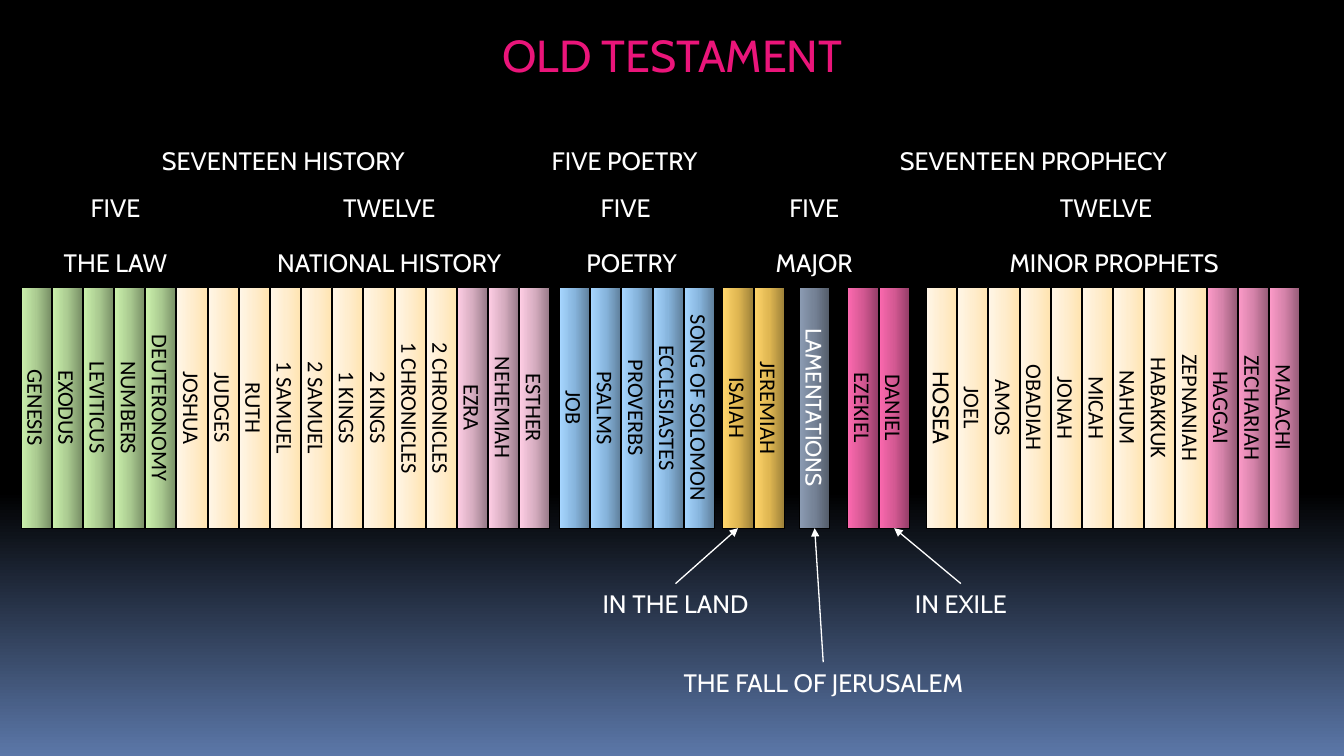
import copy
from dataclasses import dataclass

import pptx
import pptx.dml.color
import pptx.enum.shapes
import pptx.enum.text
import pptx.oxml
import pptx.oxml.ns
import pptx.util

Inches = pptx.util.Inches
Pt = pptx.util.Pt
ANCHOR = pptx.enum.text.MSO_ANCHOR
RECT = pptx.enum.shapes.MSO_SHAPE.RECTANGLE

BOOK_TOP, BOOK_W, BOOK_H = 2.85, 0.3, 2.39
PITCH = 3.4 / 11  # twelve minor prophets span 3.4 inches between first and last
LABEL_H = 0.4
BLACK, WHITE, PINK = "000000", "FFFFFF", "EA157A"

# Spine gradients: right edge, middle, left edge
GREEN = ("788F66", "ABCB91", "CBF1AC")
CREAM = ("FFE4B1", "FFEDCE", "FFF6E7")
MAUVE = ("967987", "D6ADC0", "FECDE4")
BLUE = ("5F7F9B", "87B5DD", "A7D6FF")
GOLD = ("9D8139", "E0B752", "FFD56B")
SLATE = ("535C69", "758296", "8B9BB2")
MAGENTA = ("953E68", "D45993", "FC69AF")
ROSE = ("965C77", "D583AA", "FD9BC9")


@dataclass
class Group:
    colors: tuple[str, str, str]
    books: list[str]


@dataclass
class Shelf:
    """Groups of books standing side by side from the left edge."""
    left: float
    groups: list[Group]


@dataclass
class Label:
    text: str
    left: float
    top: float
    width: float


@dataclass
class Callout:
    label: Label
    book: str


SHELVES = [
    Shelf(0.21, [
        Group(GREEN, ["GENESIS", "EXODUS", "LEVITICUS", "NUMBERS", "DEUTERONOMY"]),
        Group(CREAM, ["JOSHUA", "JUDGES", "RUTH", "1 SAMUEL", "2 SAMUEL", "1 KINGS",
                      "2 KINGS", "1 CHRONICLES", "2 CHRONICLES"]),
        Group(MAUVE, ["EZRA", "NEHEMIAH", "ESTHER"]),
    ]),
    Shelf(5.55, [Group(BLUE, ["JOB", "PSALMS", "PROVERBS", "ECCLESIASTES",
                              "SONG OF SOLOMON"])]),
    Shelf(7.17, [Group(GOLD, ["ISAIAH", "JEREMIAH"])]),
    Shelf(7.93, [Group(SLATE, ["LAMENTATIONS"])]),
    Shelf(8.41, [Group(MAGENTA, ["EZEKIEL", "DANIEL"])]),
    Shelf(9.19, [
        Group(CREAM, ["HOSEA", "JOEL", "AMOS", "OBADIAH", "JONAH", "MICAH", "NAHUM",
                      "HABAKKUK", "ZEPNANIAH"]),
        Group(ROSE, ["HAGGAI", "ZECHARIAH", "MALACHI"]),
    ]),
]
BOOK_FORMATS = {
    "LAMENTATIONS": {"name": "Cabin", "color": WHITE},
    "HOSEA": {"name": "Cabin"},
}

HEADINGS = [
    Label("THE LAW", 0.37, 2.4, 1.55),
    Label("NATIONAL HISTORY", 2, 2.4, 3.72),
    Label("POETRY", 5.49, 2.4, 1.55),
    Label("MAJOR", 7.3, 2.4, 1.55),
    Label("MINOR PROPHETS", 9.19, 2.4, 3.72),
    Label("FIVE", 0.37, 1.86, 1.55),
    Label("TWELVE", 2, 1.86, 3.72),
    Label("FIVE", 5.43, 1.86, 1.55),
    Label("FIVE", 7.3, 1.86, 1.55),
    Label("TWELVE", 9.11, 1.86, 3.72),
    Label("SEVENTEEN HISTORY", 0.29, 1.39, 5.04),
    Label("FIVE POETRY", 5.17, 1.39, 2.05),
    Label("SEVENTEEN PROPHECY", 7.46, 1.39, 5.58),
]
CALLOUTS = [
    Callout(Label("IN THE LAND", 5.87, 5.79, 1.66), "ISAIAH"),
    Callout(Label("THE FALL OF JERUSALEM", 6.67, 6.57, 2.99), "LAMENTATIONS"),
    Callout(Label("IN EXILE", 8.93, 5.79, 1.2), "DANIEL"),
]


def rgb(value: str) -> pptx.dml.color.RGBColor:
    return pptx.dml.color.RGBColor.from_string(value)


def set_gradient(fill, element, stops: list[tuple[float, str]], angle: float) -> None:
    """Give the fill inside element three stops; angle runs counter-clockwise."""
    fill.gradient()
    fill.gradient_angle = angle
    gs_list = element.find(".//" + pptx.oxml.ns.qn("a:gsLst"))
    gs_list.append(copy.deepcopy(gs_list[0]))
    for stop, (position, color) in zip(fill.gradient_stops, stops):
        stop.position = position
        stop.color.rgb = rgb(color)


def write(tf, text: str, formats: dict) -> None:
    """Write one centred paragraph."""
    p = tf.paragraphs[0]
    p.alignment = pptx.enum.text.PP_ALIGN.CENTER
    r = p.add_run()
    r.text = text
    for key, value in formats.items():
        if key == "color":
            r.font.color.rgb = rgb(value)
        else:
            setattr(r.font, key, value)


def add_rect(s, left: float, top: float, width: float, height: float, line: float):
    sp = s.shapes.add_shape(RECT, Inches(left), Inches(top), Inches(width), Inches(height))
    sp.shadow.inherit = False
    sp.line.color.rgb = rgb(BLACK)
    sp.line.width = Pt(line)
    return sp


def add_title(s) -> None:
    sp = add_rect(s, 2.71, 0.23, 7.92, 0.68, 1.5)
    sp.fill.solid()
    sp.fill.fore_color.rgb = rgb(BLACK)
    sp.text_frame.vertical_anchor = ANCHOR.TOP
    write(sp.text_frame, "OLD TESTAMENT", {"size": Pt(32), "name": "Cabin", "color": PINK})


def add_book(s, text: str, left: float, colors: tuple[str, str, str]):
    sp = add_rect(s, left, BOOK_TOP, BOOK_W, BOOK_H, 0.75)
    set_gradient(sp.fill, sp.element.spPr, list(zip((0, 0.5, 1), colors)), 180)
    tf = sp.text_frame
    tf.vertical_anchor = ANCHOR.MIDDLE
    tf._txBody.bodyPr.set("vert", "vert")
    formats = {"size": Pt(16), "name": "Calibri", "color": BLACK}
    write(tf, text, formats | BOOK_FORMATS.get(text, {}))
    return sp


def add_shelf(s, shelf: Shelf) -> dict:
    """Draw the shelf and return its shapes by book name."""
    books = [(book, group.colors) for group in shelf.groups for book in group.books]
    return {book: add_book(s, book, shelf.left + i * PITCH, colors)
            for i, (book, colors) in enumerate(books)}


def add_label(s, label: Label, wrap: bool = True):
    sp = s.shapes.add_textbox(Inches(label.left), Inches(label.top),
                              Inches(label.width), Inches(LABEL_H))
    tf = sp.text_frame
    tf.word_wrap = wrap
    tf.auto_size = pptx.enum.text.MSO_AUTO_SIZE.SHAPE_TO_FIT_TEXT
    write(tf, label.text, {"size": Pt(18), "name": "Cabin", "color": WHITE})
    return sp


def add_callout(s, callout: Callout, book) -> None:
    """Draw the label and an arrow from its top to the foot of the book."""
    label = add_label(s, callout.label, wrap=False)
    cn = s.shapes.add_connector(pptx.enum.shapes.MSO_CONNECTOR.STRAIGHT, 0, 0, 0, 0)
    cn.begin_connect(label, 0)
    cn.end_connect(book, 2)
    cn.line.color.rgb = rgb(WHITE)
    cn.line.width = Pt(0.94)
    ln = cn.line._get_or_add_ln()
    ln.append(pptx.oxml.parse_xml(
        f'<a:tailEnd {pptx.oxml.ns.nsdecls("a")} type="triangle"/>'))
    cn.element.spPr.append(pptx.oxml.parse_xml(
        f'<a:effectLst {pptx.oxml.ns.nsdecls("a")}/>'))


def main() -> None:
    prs = pptx.Presentation()
    prs.slide_width, prs.slide_height = Inches(13.33), Inches(7.5)
    s = prs.slides.add_slide(prs.slide_layouts[6])
    set_gradient(s.background.fill, s.element,
                 [(0, BLACK), (0.65, BLACK), (1, "5B77A8")], 270)
    add_title(s)
    books = {}
    for shelf in SHELVES:
        books |= add_shelf(s, shelf)
    for heading in HEADINGS:
        add_label(s, heading)
    for callout in CALLOUTS:
        add_callout(s, callout, books[callout.book])
    prs.save("out.pptx")


if __name__ == "__main__":
    main()
